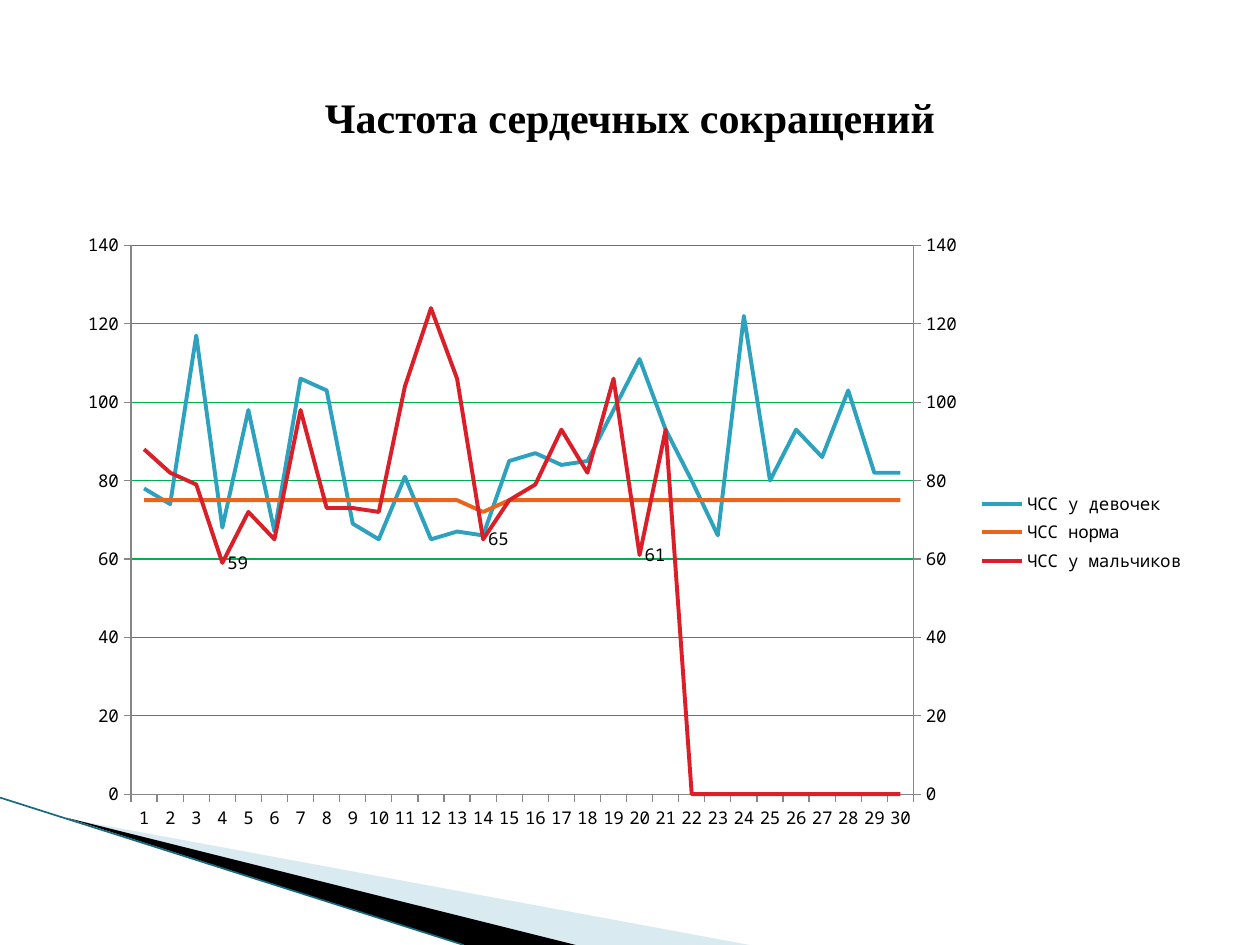
"""Build a slide with a line chart of heart rates."""
from copy import deepcopy
from lxml.etree import SubElement
from pptx import Presentation
from pptx.chart.data import CategoryChartData
from pptx.dml.color import RGBColor
from pptx.enum.chart import XL_CHART_TYPE, XL_LABEL_POSITION, XL_LEGEND_POSITION, XL_TICK_MARK
from pptx.enum.shapes import MSO_CONNECTOR
from pptx.enum.text import MSO_ANCHOR, PP_ALIGN
from pptx.oxml.ns import qn
from pptx.util import Inches, Pt


def paint(part, color):
    part.solid()
    part.fore_color.rgb = RGBColor.from_string(color)


deck = Presentation()
deck.slide_width, deck.slide_height = Inches(10), Inches(7.5)
slide = deck.slides.add_slide(deck.slide_layouts[6])
shapes = slide.shapes

wedges = [
    ("A0CBDC", 40, [(0.55, 6.5), (5.95, 7.5), (4.56, 7.5)]),
    ("000000", 100, [(0.53, 6.49), (4.57, 7.5), (3.68, 7.5)]),
]
for color, alpha, spots in wedges:
    spots = [(Inches(x), Inches(y)) for x, y in spots]
    form = shapes.build_freeform(*spots[0])
    form.add_line_segments(spots[1:])
    wedge = form.convert_to_shape()
    wedge.shadow.inherit = False
    wedge.line.fill.background()
    paint(wedge.fill, color)
    if alpha < 100:
        tint = wedge.fill._xPr.find(".//" + qn("a:srgbClr"))
        SubElement(tint, qn("a:alpha"), val=str(alpha * 1000))

edge = shapes.add_connector(
    MSO_CONNECTOR.STRAIGHT, Inches(0), Inches(6.33), Inches(3.68), Inches(7.5))
paint(edge.line.fill, "16697F")
edge.line.width = Pt(0.95)
SubElement(edge._element.spPr, qn("a:effectLst"))

title = shapes.add_textbox(Inches(0.5), Inches(0.3), Inches(9), Inches(1.25))
frame = title.text_frame
frame.word_wrap = True
frame.vertical_anchor = MSO_ANCHOR.MIDDLE
para = frame.paragraphs[0]
para.alignment = PP_ALIGN.CENTER
run = para.add_run()
run.text = "Частота сердечных сокращений"
run.font.name = "Times New Roman"
run.font.size = Pt(24)
run.font.bold = True
paint(run.font.fill, "000000")

girls = [78, 74, 117, 68, 98, 67, 106, 103, 69, 65, 81, 65, 67, 66, 85,
         87, 84, 85, 98, 111, 93, 80, 66, 122, 80, 93, 86, 103, 82, 82]
norm = [75] * 13 + [72] + [75] * 16
boys = [88, 82, 79, 59, 72, 65, 98, 73, 73, 72, 104, 124, 106, 65, 75,
        79, 93, 82, 106, 61, 93] + [None] * 9
data = CategoryChartData()
data.categories = [str(n) for n in range(1, 31)]
data.add_series("ЧСС у девочек", girls)
data.add_series("ЧСС норма", norm)
data.add_series("ЧСС у мальчиков", boys)
chart = shapes.add_chart(
    XL_CHART_TYPE.LINE, Inches(0.5), Inches(1.75), Inches(9), Inches(4.95), data).chart
chart.has_title = False
chart.font.name = "Noto Sans Mono"
chart.font.size = Pt(10)
paint(chart.font.fill, "000000")
chart.has_legend = True
chart.legend.position = XL_LEGEND_POSITION.RIGHT
chart.legend.include_in_layout = False

plot = chart.plots[0]
plot.vary_by_categories = False
for line, color in zip(plot.series, ["2DA2BF", "EB641B", "DA1F28"]):
    line.smooth = False
    paint(line.format.line.fill, color)
    line.format.line.width = Pt(2.25)
for n in (3, 13, 19):
    line.points[n].data_label.position = XL_LABEL_POSITION.RIGHT
line.data_labels.show_value = False

rate = chart.value_axis
rate.minimum_scale, rate.maximum_scale, rate.major_unit = 0, 140, 20
rate.has_major_gridlines = True
paint(rate.major_gridlines.format.line.fill, "00B050")
rate.major_gridlines.format.line.width = Pt(0.75)
for axis in (rate, chart.category_axis):
    axis.major_tick_mark = XL_TICK_MARK.OUTSIDE
    axis.minor_tick_mark = XL_TICK_MARK.NONE
    paint(axis.format.line.fill, "868686")
    axis.format.line.width = Pt(0.75)

area = chart._chartSpace.find(".//" + qn("c:plotArea"))
left = area.find(qn("c:lineChart"))
right = deepcopy(left)
left.remove(left.findall(qn("c:ser"))[2])
for item in right.findall(qn("c:ser"))[:2]:
    right.remove(item)
left.addnext(right)
cat, val = area.find(qn("c:catAx")), area.find(qn("c:valAx"))
cat2, val2 = deepcopy(cat), deepcopy(val)
val.addnext(val2)
val2.addnext(cat2)
ids = {cat.find(qn("c:axId")).get("val"): "5001", val.find(qn("c:axId")).get("val"): "5002"}
for group in (right, cat2, val2):
    for tag in ("c:axId", "c:crossAx"):
        for item in group.findall(qn(tag)):
            item.set("val", ids[item.get("val")])
cat2.find(qn("c:delete")).set("val", "1")
val2.remove(val2.find(qn("c:majorGridlines")))
val2.find(qn("c:axPos")).set("val", "r")
val2.find(qn("c:crosses")).set("val", "max")
chart._chartSpace.find(".//" + qn("c:dispBlanksAs")).set("val", "zero")

for old in area.findall(qn("c:layout")):
    area.remove(old)
layout = SubElement(area, qn("c:layout"))
area.insert(0, layout)
place = SubElement(layout, qn("c:manualLayout"))
for tag, value in [("layoutTarget", "inner"), ("xMode", "edge"), ("yMode", "edge"),
                   ("x", "0.06"), ("y", "0.04"), ("w", "0.69"), ("h", "0.88")]:
    SubElement(place, qn("c:" + tag), val=value)

deck.save("out.pptx")
